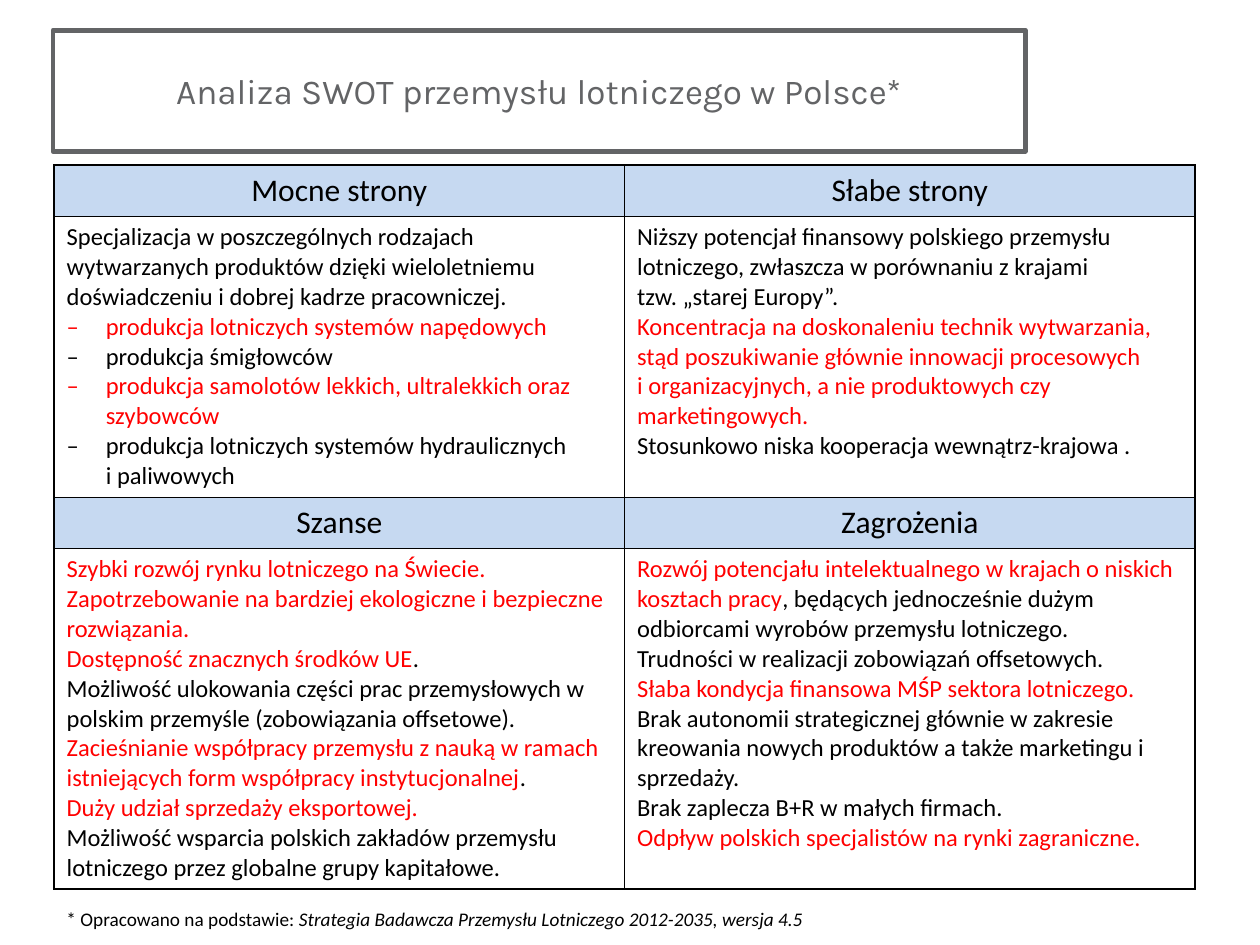
from lxml import etree
from pptx import Presentation
from pptx.dml.color import RGBColor
from pptx.enum.shapes import MSO_SHAPE
from pptx.enum.text import MSO_ANCHOR, PP_ALIGN
from pptx.oxml.ns import qn
from pptx.util import Cm, Pt

RECTANGLE = MSO_SHAPE.RECTANGLE
MIDDLE = MSO_ANCHOR.MIDDLE
CENTER, LEFT = PP_ALIGN.CENTER, PP_ALIGN.LEFT
BLACK, RED, GRAY, BLUE = "000000", "FF0000", "636466", "C6D9F1"

TITLE = "Analiza SWOT przemysłu lotniczego w Polsce*"
SOURCE = [
    ("* Opracowano na podstawie: ", False),
    ("Strategia Badawcza Przemysłu Lotniczego 2012-2035, wersja 4.5", True),
]
DASH = "– "
STRENGTHS = [
    [("Specjalizacja w poszczególnych rodzajach wytwarzanych produktów dzięki "
      "wieloletniemu doświadczeniu i dobrej kadrze pracowniczej.", BLACK)],
    [(DASH + "produkcja lotniczych systemów napędowych", RED)],
    [(DASH + "produkcja śmigłowców", BLACK)],
    [(DASH + "produkcja samolotów lekkich, ultralekkich oraz szybowców", RED)],
    [(DASH + "produkcja lotniczych systemów hydraulicznych \ni paliwowych", BLACK)],
]
WEAKNESSES = [
    [("Niższy potencjał finansowy polskiego przemysłu lotniczego, "
      "zwłaszcza w porównaniu z krajami", BLACK)],
    [("tzw. „starej Europy”.", BLACK)],
    [("Koncentracja na doskonaleniu technik wytwarzania, stąd poszukiwanie głównie "
      "innowacji procesowych \ni organizacyjnych, a nie produktowych czy "
      "marketingowych.", RED)],
    [("Stosunkowo niska kooperacja wewnątrz-krajowa .", BLACK)],
]
OPPORTUNITIES = [
    [("Szybki rozwój rynku lotniczego na Świecie.", RED)],
    [("Zapotrzebowanie na bardziej ekologiczne i bezpieczne rozwiązania.", RED)],
    [("Dostępność znacznych środków UE", RED), (".", BLACK)],
    [("Możliwość ulokowania części prac przemysłowych w polskim przemyśle "
      "(zobowiązania offsetowe).", BLACK)],
    [("Zacieśnianie współpracy przemysłu z nauką w ramach istniejących form "
      "współpracy instytucjonalnej", RED), (".", BLACK)],
    [("Duży udział sprzedaży eksportowej.", RED)],
    [("Możliwość wsparcia polskich zakładów przemysłu lotniczego przez globalne "
      "grupy kapitałowe.", BLACK)],
]
THREATS = [
    [("Rozwój potencjału intelektualnego w krajach o niskich kosztach pracy", RED),
     (", będących jednocześnie dużym odbiorcami wyrobów przemysłu lotniczego.", BLACK)],
    [("Trudności w realizacji zobowiązań offsetowych.", BLACK)],
    [("Słaba kondycja finansowa MŚP sektora lotniczego.", RED)],
    [("Brak autonomii strategicznej głównie w zakresie kreowania nowych produktów "
      "a także marketingu i", BLACK)],
    [("sprzedaży.", BLACK)],
    [("Brak zaplecza B+R w małych firmach.", BLACK)],
    [("Odpływ polskich specjalistów na rynki zagraniczne.", RED)],
]
QUADRANTS = [
    [("Mocne strony", STRENGTHS), ("Słabe strony", WEAKNESSES)],
    [("Szanse", OPPORTUNITIES), ("Zagrożenia", THREATS)],
]
ROW_HEIGHTS = [1.03, 5.59, 1.03, 6.78]
COLUMN_WIDTH = 11.5
TABLE_LEFT, TABLE_TOP = 1.09, 3.33


def color(value):
    return RGBColor.from_string(value)


def style(font, size, value=BLACK, name="Calibri"):
    font.size = Pt(size)
    font.name = name
    font.bold = False
    font.color.rgb = color(value)


def add_borders(cell):
    properties = cell._tc.get_or_add_tcPr()
    for side in ("a:lnL", "a:lnR", "a:lnT", "a:lnB"):
        line = etree.SubElement(properties, qn(side), w=str(Pt(1)))
        fill = etree.SubElement(line, qn("a:solidFill"))
        etree.SubElement(fill, qn("a:srgbClr"), val=BLACK)


def add_dash(paragraph):
    properties = paragraph._p.get_or_add_pPr()
    properties.set("marL", str(Cm(0.79)))
    properties.set("indent", str(-Cm(0.79)))
    etree.SubElement(properties, qn("a:buFont"), typeface="Calibri")
    etree.SubElement(properties, qn("a:buChar"), char=DASH.strip())


def fill_cell(cell, paragraphs, size, alignment, background=None):
    add_borders(cell)
    if background:
        cell.fill.solid()
        cell.fill.fore_color.rgb = color(background)
    else:
        cell.fill.background()
    text_frame = cell.text_frame
    for index, segments in enumerate(paragraphs):
        paragraph = text_frame.add_paragraph() if index else text_frame.paragraphs[0]
        paragraph.alignment = alignment
        if segments[0][0].startswith(DASH):
            add_dash(paragraph)
        for text, value in segments:
            for part, line in enumerate(text.removeprefix(DASH).split("\n")):
                if part:
                    paragraph.add_line_break()
                run = paragraph.add_run()
                run.text = line
                style(run.font, size, value)


def add_title(slide):
    shape = slide.shapes.add_shape(RECTANGLE, Cm(1.07), Cm(0.61), Cm(19.6), Cm(2.44))
    shape.shadow.inherit = False
    shape.fill.background()
    shape.line.color.rgb = color(GRAY)
    shape.line.width = Pt(2.75)
    text_frame = shape.text_frame
    text_frame.word_wrap = True
    text_frame.vertical_anchor = MIDDLE
    text_frame.text = TITLE
    paragraph = text_frame.paragraphs[0]
    paragraph.alignment = CENTER
    style(paragraph.runs[0].font, 20, GRAY, "Karla")


def add_swot_table(slide):
    table = slide.shapes.add_table(
        len(ROW_HEIGHTS), 2, Cm(TABLE_LEFT), Cm(TABLE_TOP),
        Cm(2 * COLUMN_WIDTH), Cm(sum(ROW_HEIGHTS))).table
    table.first_row = False
    table.horz_banding = False
    for row, height in zip(table.rows, ROW_HEIGHTS):
        row.height = Cm(height)
    for column in table.columns:
        column.width = Cm(COLUMN_WIDTH)
    for band, quadrants in enumerate(QUADRANTS):
        for column, (heading, paragraphs) in enumerate(quadrants):
            fill_cell(table.cell(2 * band, column), [[(heading, BLACK)]], 18, CENTER, BLUE)
            fill_cell(table.cell(2 * band + 1, column), paragraphs, 14, LEFT)


def add_source(slide):
    box = slide.shapes.add_textbox(Cm(TABLE_LEFT), Cm(18.16), Cm(15.6), Cm(0.74))
    box.text_frame.word_wrap = False
    paragraph = box.text_frame.paragraphs[0]
    for text, italic in SOURCE:
        run = paragraph.add_run()
        run.text = text
        style(run.font, 11)
        run.font.italic = italic


def main():
    presentation = Presentation()
    presentation.slide_width = Cm(25.4)
    presentation.slide_height = Cm(19.05)
    slide = presentation.slides.add_slide(presentation.slide_layouts[6])
    add_title(slide)
    add_swot_table(slide)
    add_source(slide)
    presentation.save("out.pptx")


if __name__ == "__main__":
    main()
